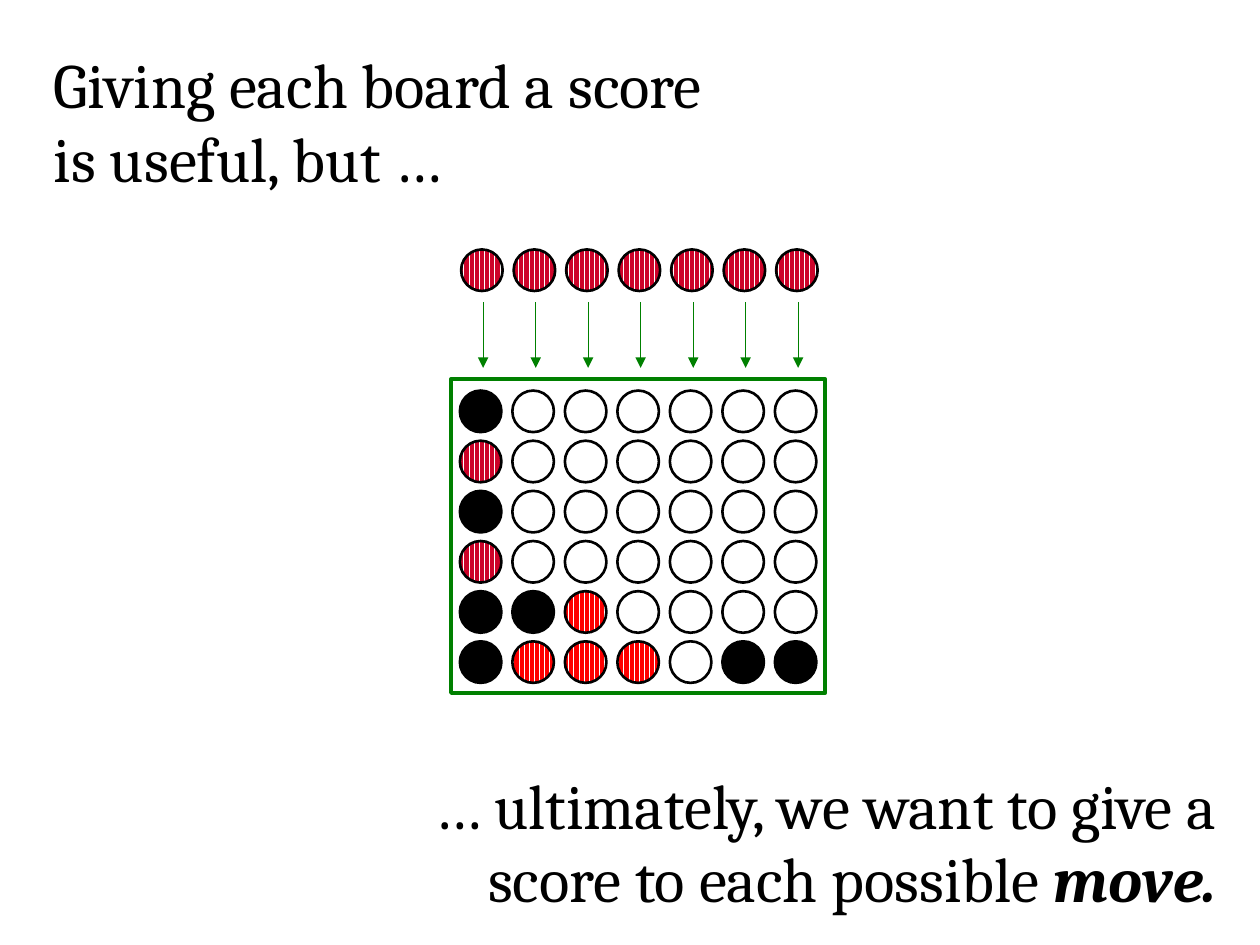
from lxml import etree
from pptx import Presentation
from pptx.dml.color import RGBColor
from pptx.enum import dml, shapes, text
from pptx.oxml import ns
from pptx.util import Inches, Pt

COLORS = {"black": "000000", "white": "FFFFFF", "crimson": "CD0329",
          "red": "FF0000", "green": "008000"}
DISCS = {"B": "black", ".": "white", "C": "crimson", "R": "red"}
BOARD = ["B......", "C......", "B......", "C......", "BBR....", "BRRR.BB"]
DISC = Inches(0.33)
COL_STEP = Inches(2.5) / 6
ROW_STEP = Inches(1.99) / 5


def rgb(name):
    """Return the named palette colour."""
    return RGBColor.from_string(COLORS[name])


def add_text(s, box, runs, align):
    """Place a paragraph of (words, emphasised) runs in the box."""
    tf = s.shapes.add_textbox(*box).text_frame
    tf.word_wrap = True
    p = tf.paragraphs[0]
    p.alignment = align
    p.line_spacing = Pt(42)
    p.font.size = Pt(36)
    p.font.name = "Cambria"
    p.font.color.rgb = rgb("black")
    for words, emphasised in runs:
        r = p.add_run()
        r.text = words
        if emphasised:
            r.font.bold = r.font.italic = True


def add_disc(s, left, top, color):
    """Draw one game piece, striped when it is a shade of red."""
    sp = s.shapes.add_shape(shapes.MSO_SHAPE.OVAL, int(left), int(top), DISC, DISC)
    sp.shadow.inherit = False
    if color in ("crimson", "red"):
        sp.fill.patterned()
        sp.fill.pattern = dml.MSO_PATTERN.DARK_VERTICAL
        sp.fill.fore_color.rgb = rgb(color)
        sp.fill.back_color.rgb = rgb("white")
    else:
        sp.fill.solid()
        sp.fill.fore_color.rgb = rgb(color)
    sp.line.color.rgb = rgb("black")
    sp.line.width = Pt(1.5)


def add_arrow(s, x, top, bottom):
    """Draw a green arrow straight down."""
    c = s.shapes.add_connector(shapes.MSO_CONNECTOR.STRAIGHT, int(x), top, int(x), bottom)
    c.line.color.rgb = rgb("green")
    c.line.width = Pt(0.75)
    etree.SubElement(c.line._get_or_add_ln(), ns.qn("a:tailEnd"), type="triangle")
    etree.SubElement(c._element.spPr, ns.qn("a:effectLst"))


def add_board(s, left, top, width, height):
    """Draw the grid of pieces and its green frame."""
    for row, cells in enumerate(BOARD):
        for col, cell in enumerate(cells):
            add_disc(s, left + Inches(0.07) + col * COL_STEP,
                     top + Inches(0.09) + row * ROW_STEP, DISCS[cell])
    sp = s.shapes.add_shape(shapes.MSO_SHAPE.RECTANGLE, left, top, width, height)
    sp.shadow.inherit = False
    sp.fill.background()
    sp.line.color.rgb = rgb("green")
    sp.line.width = Pt(2.25)


def add_moves(s, left, top, height):
    """Draw the possible moves, each a piece above an arrow."""
    for col in range(len(BOARD[0])):
        x = left + col * COL_STEP
        add_disc(s, x, top, "crimson")
        add_arrow(s, x + DISC / 2 + Inches(0.01), top + Inches(0.42), top + height)


def main():
    """Build the slide and save it."""
    prs = Presentation()
    prs.slide_width, prs.slide_height = Inches(10), Inches(7.5)
    s = prs.slides.add_slide(prs.slide_layouts[6])
    add_text(s, (Inches(0.33), Inches(0.33), Inches(5.75), Inches(1.28)),
             [("Giving each board a score is useful, but …", False)],
             text.PP_ALIGN.LEFT)
    add_text(s, (Inches(2.42), Inches(6.05), Inches(7.33), Inches(1.28)),
             [("… ultimately, we want to give a score to each possible ", False),
              ("move.", True)], text.PP_ALIGN.RIGHT)
    add_board(s, Inches(3.58), Inches(3.01), Inches(2.97), Inches(2.49))
    add_moves(s, Inches(3.66), Inches(1.98), Inches(0.94))
    prs.save("out.pptx")


if __name__ == "__main__":
    main()
